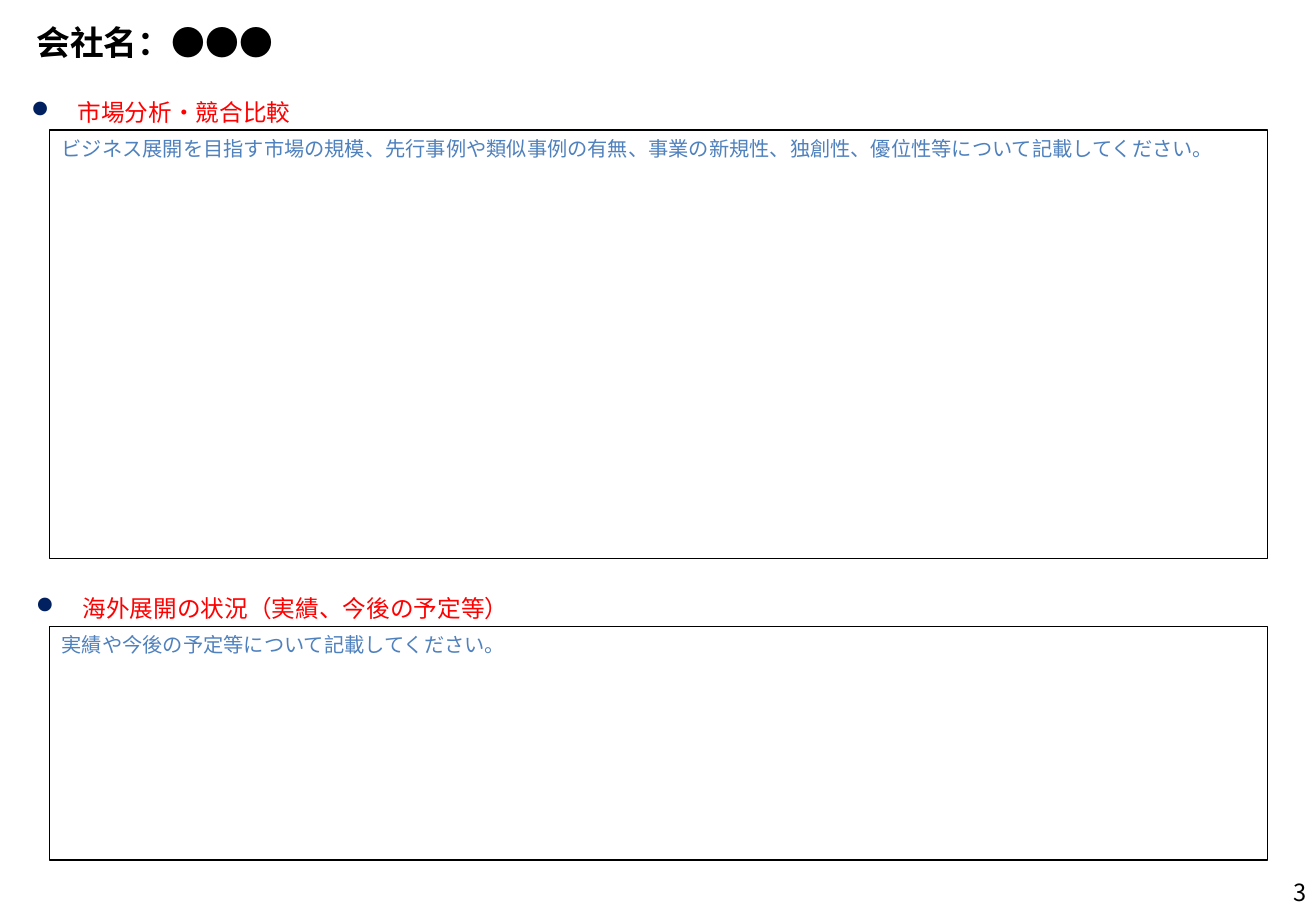
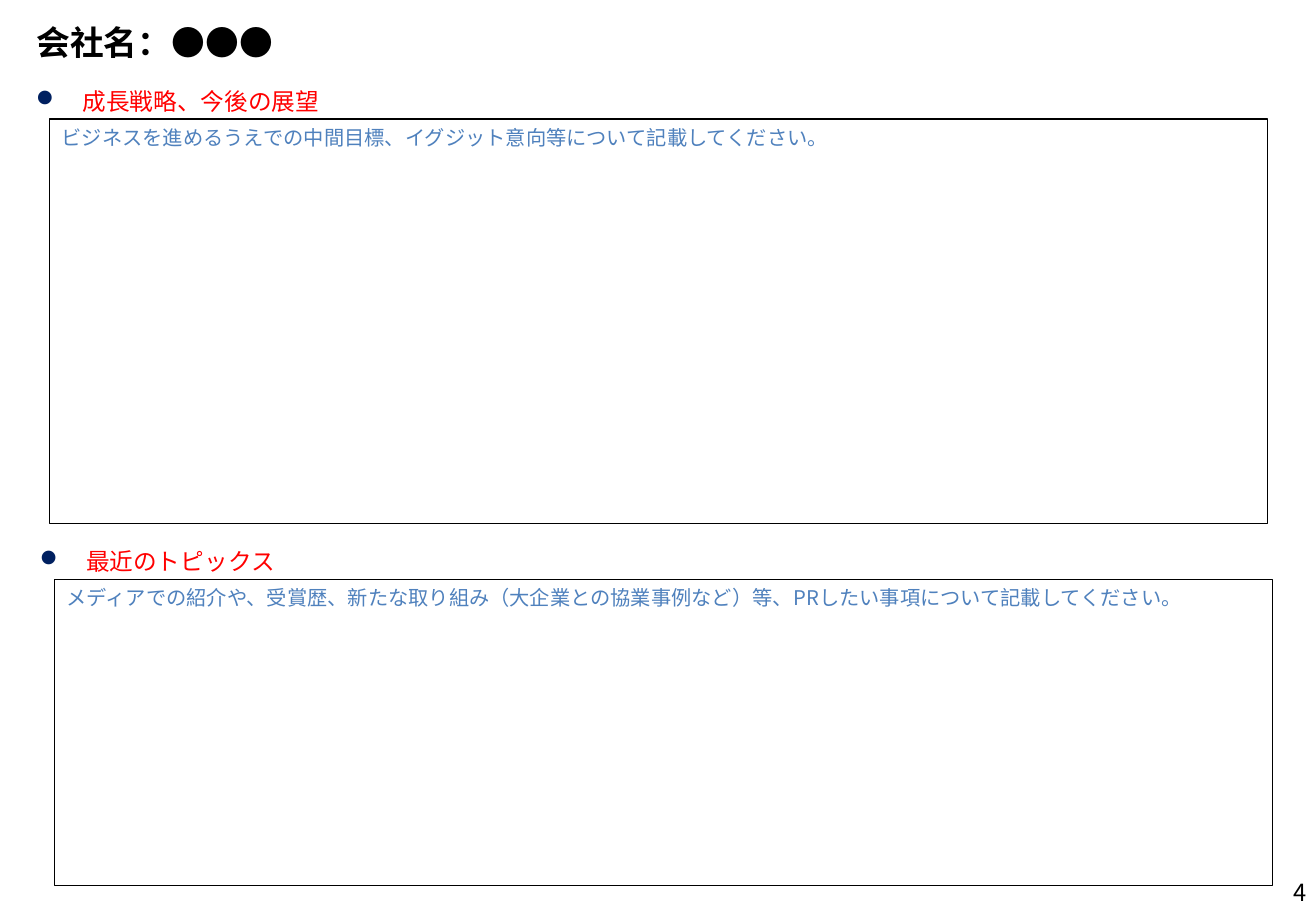
from lxml.etree import SubElement
from pptx import Presentation
from pptx.dml.color import RGBColor
from pptx.enum.shapes import MSO_SHAPE as Shape
from pptx.enum.text import MSO_ANCHOR as Anchor, PP_ALIGN as Align
from pptx.oxml.ns import qn
from pptx.util import Inches, Pt

BLACK = RGBColor(0x00, 0x00, 0x00)
RED = RGBColor(0xFF, 0x00, 0x00)
BLUE = RGBColor(0x4F, 0x81, 0xBD)
NAVY = RGBColor(0x00, 0x20, 0x60)
FONT = "Noto Sans CJK JP"

TITLE = {"size": Pt(20), "bold": True}
HEAD = {"size": Pt(14)}
HINT = {"size": Pt(12)}
PAGE = {"size": Pt(14)}
SPACING = {"line_spacing": Pt(30), "space_before": Pt(6), "space_after": Pt(6)}

HEAD_W, HEAD_H = 6.37, 0.5
INDENT = 0.38

# Each section: heading, hint, heading left, frame (left, top, width, height)
SLIDES = [
    ("3", [
        ("市場分析・競合比較",
         "ビジネス展開を目指す市場の規模、先行事例や類似事例の有無、"
         "事業の新規性、独創性、優位性等について記載してください。",
         0.16, (0.41, 1.07, 10.02, 3.53)),
        ("海外展開の状況（実績、今後の予定等）",
         "実績や今後の予定等について記載してください。",
         0.2, (0.41, 5.16, 10.02, 1.92)),
    ]),
    ("4", [
        ("成長戦略、今後の展望",
         "ビジネスを進めるうえでの中間目標、イグジット意向等について"
         "記載してください。",
         0.2, (0.41, 0.98, 10.02, 3.33)),
        ("最近のトピックス",
         "メディアでの紹介や、受賞歴、新たな取り組み（大企業との協業事例など）等、"
         "PRしたい事項について記載してください。",
         0.23, (0.45, 4.77, 10.02, 2.52)),
    ]),
]


def style(item, values):
    for name, value in values.items():
        setattr(item, name, value)


def write(shape, text, form, color, align=Align.LEFT, anchor=Anchor.TOP):
    """Fill the shape with one styled paragraph and return it."""
    style(shape.text_frame, {"word_wrap": True, "vertical_anchor": anchor})
    para = shape.text_frame.paragraphs[0]
    para.alignment = align
    run = para.add_run()
    run.text = text
    style(run.font, {"name": FONT, **form})
    run.font.color.rgb = color
    SubElement(run.font._element, qn("a:ea"), typeface=FONT)
    return para


def add_text(slide, box, *args, **kwargs):
    shape = slide.shapes.add_textbox(*map(Inches, box))
    return write(shape, *args, **kwargs)


def add_bullet(para):
    """Give the paragraph a round navy bullet with a hanging indent."""
    props = para._p.get_or_add_pPr()
    props.set("marL", str(Inches(INDENT)))
    props.set("indent", str(-Inches(INDENT)))
    color = SubElement(props, qn("a:buClr"))
    SubElement(color, qn("a:srgbClr"), val=str(NAVY))
    SubElement(props, qn("a:buFont"), typeface="Wingdings", charset="2")
    SubElement(props, qn("a:buChar"), char="l")


def add_section(slide, head, hint, left, box):
    """Place a framed hint with its bulleted heading right above it."""
    para = add_text(slide, (left, box[1] - HEAD_H, HEAD_W, HEAD_H),
                    head, HEAD, RED)
    style(para, SPACING)
    add_bullet(para)

    frame = slide.shapes.add_shape(Shape.RECTANGLE, *map(Inches, box))
    frame.shadow.inherit = False
    frame.fill.background()
    frame.line.color.rgb = BLACK
    frame.line.width = Pt(0.75)
    write(frame, hint, HINT, BLUE)


def add_slide(deck, page, parts):
    slide = deck.slides.add_slide(deck.slide_layouts[6])
    add_text(slide, (0.2, 0.13, 8.12, 0.44), "会社名：●●●", TITLE, BLACK)
    for part in parts:
        add_section(slide, *part)
    add_text(slide, (8.32, 7.14, 2.53, 0.4), page, PAGE, BLACK,
             Align.RIGHT, Anchor.MIDDLE)


def main():
    deck = Presentation()
    deck.slide_width, deck.slide_height = Inches(10.83), Inches(7.5)
    for page, parts in SLIDES:
        add_slide(deck, page, parts)
    deck.save("out.pptx")


if __name__ == "__main__":
    main()
